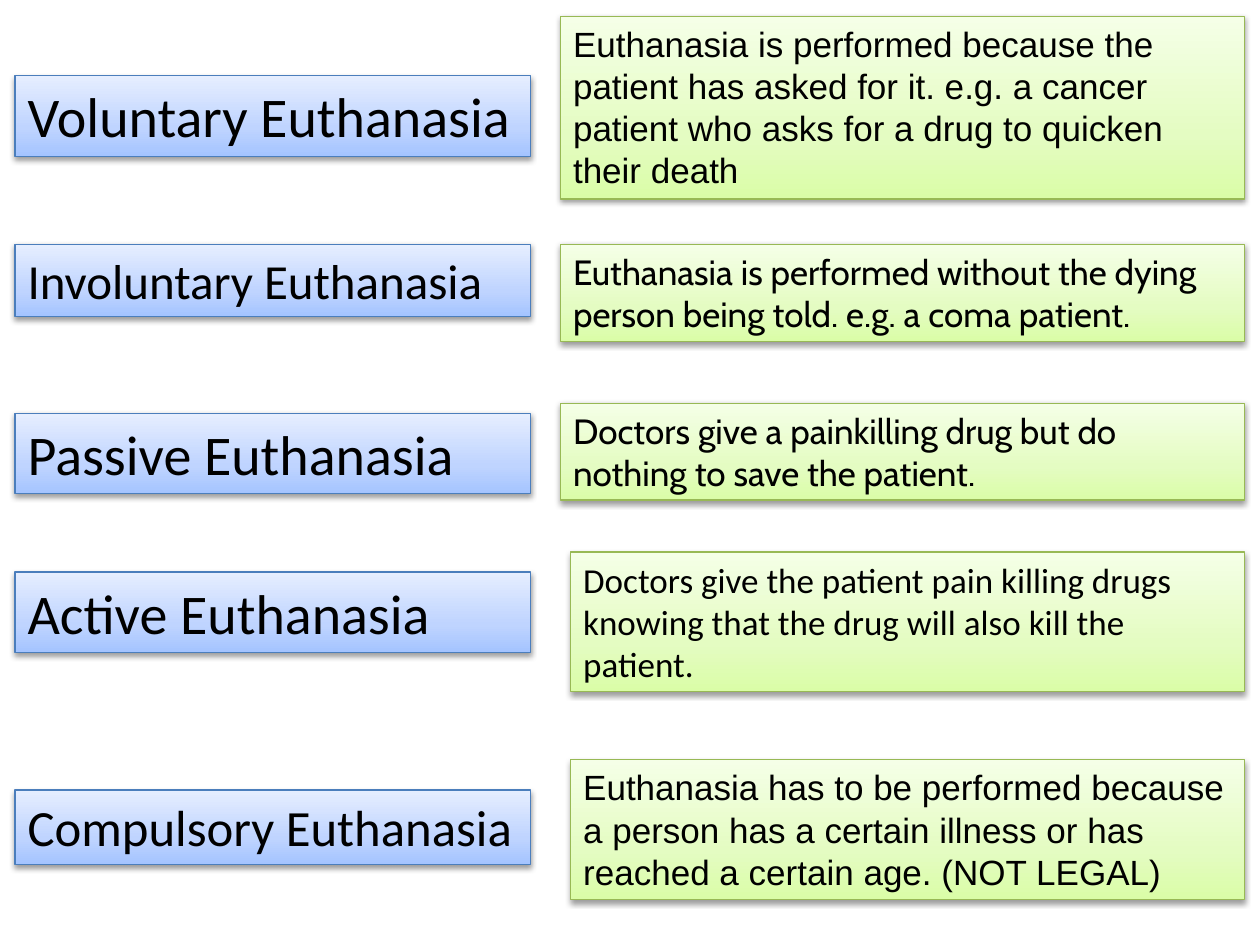
from copy import deepcopy

from lxml import etree
from pptx import Presentation
from pptx.dml.color import RGBColor
from pptx.enum.shapes import MSO_SHAPE
from pptx.enum.text import MSO_ANCHOR, MSO_AUTO_SIZE, PP_ALIGN
from pptx.oxml import parse_xml
from pptx.oxml.ns import nsdecls, qn
from pptx.util import Inches, Pt

RECTANGLE = MSO_SHAPE.RECTANGLE
TOP = MSO_ANCHOR.TOP
LEFT = PP_ALIGN.LEFT
GROW = MSO_AUTO_SIZE.SHAPE_TO_FIT_TEXT

COLORS = {
    "text": "000000",
    "term_line": "4B7EBC",
    "term_bottom": "A4C4FF",
    "term_middle": "BFD4FF",
    "term_top": "E6EEFF",
    "meaning_line": "98B955",
    "meaning_bottom": "DAFDA7",
    "meaning_middle": "E4FCC2",
    "meaning_top": "F5FFE7",
}
STOPS = [("bottom", 0), ("middle", 0.35), ("top", 1)]
SHADOW = (
    f'<a:outerShdw {nsdecls("a")} blurRad="40000" dist="20000" dir="5400000" rotWithShape="0">'
    '<a:srgbClr val="000000"><a:alpha val="38000"/></a:srgbClr></a:outerShdw>'
)

TERM_LEFT, TERM_WIDTH = 0.12, 4.09
MEANING_RIGHT = 9.88

TERMS = [
    ("Voluntary Euthanasia", 0.6, 0.64, 32),
    ("Involuntary Euthanasia", 1.94, 0.57, 28),
    ("Passive Euthanasia", 3.28, 0.64, 32),
    ("Active Euthanasia", 4.54, 0.64, 32),
    ("Compulsory Euthanasia", 6.27, 0.59, 29),
]
MEANINGS = [
    ("Euthanasia is performed because the patient has asked for it. e.g. a cancer "
     "patient who asks for a drug to quicken their death", 4.45, 0.13, 1.45, "Arial"),
    ("Euthanasia is performed without the dying person being told. e.g. a coma patient.",
     4.45, 1.94, 0.77, "Cabin"),
    ("Doctors give a painkilling drug but do nothing to save the patient.",
     4.45, 3.2, 0.77, "Cabin"),
    ("Doctors give the patient pain killing drugs knowing that the drug will also kill "
     "the patient.", 4.53, 4.38, 1.11, "Calibri"),
    ("Euthanasia has to be performed because a person has a certain illness or has "
     "reached a certain age. (NOT LEGAL)", 4.53, 6.03, 1.11, "Arial"),
]

prs = Presentation()
prs.slide_width, prs.slide_height = Inches(10), Inches(7.5)
slide = prs.slides.add_slide(prs.slide_layouts[6])


def add_card(role, text, left, top, width, height, font_name, size):
    card = slide.shapes.add_shape(
        RECTANGLE, Inches(left), Inches(top), Inches(width), Inches(height))
    card.fill.gradient()
    card.fill.gradient_angle = 90
    properties = card._element.spPr
    stop_list = properties.find(".//" + qn("a:gsLst"))
    stop_list.insert(1, deepcopy(stop_list[0]))
    for stop, (level, position) in zip(card.fill.gradient_stops, STOPS):
        stop.position = position
        stop.color.rgb = RGBColor.from_string(COLORS[f"{role}_{level}"])
    card.line.color.rgb = RGBColor.from_string(COLORS[f"{role}_line"])
    card.line.width = Pt(0.75)
    card.shadow.inherit = False
    properties.find(qn("a:effectLst")).append(parse_xml(SHADOW))

    frame = card.text_frame
    frame.word_wrap = True
    frame.auto_size = GROW
    frame.vertical_anchor = TOP
    frame.text = text
    paragraph = frame.paragraphs[0]
    paragraph.alignment = LEFT
    font = paragraph.runs[0].font
    font.name = font_name
    font.size = Pt(size)
    font.color.rgb = RGBColor.from_string(COLORS["text"])


for term, top, height, size in TERMS:
    add_card("term", term, TERM_LEFT, top, TERM_WIDTH, height, "Calibri", size)

for meaning, left, top, height, font_name in MEANINGS:
    add_card("meaning", meaning, left, top, MEANING_RIGHT - left, height, font_name, 20)

prs.save("out.pptx")
""" """
